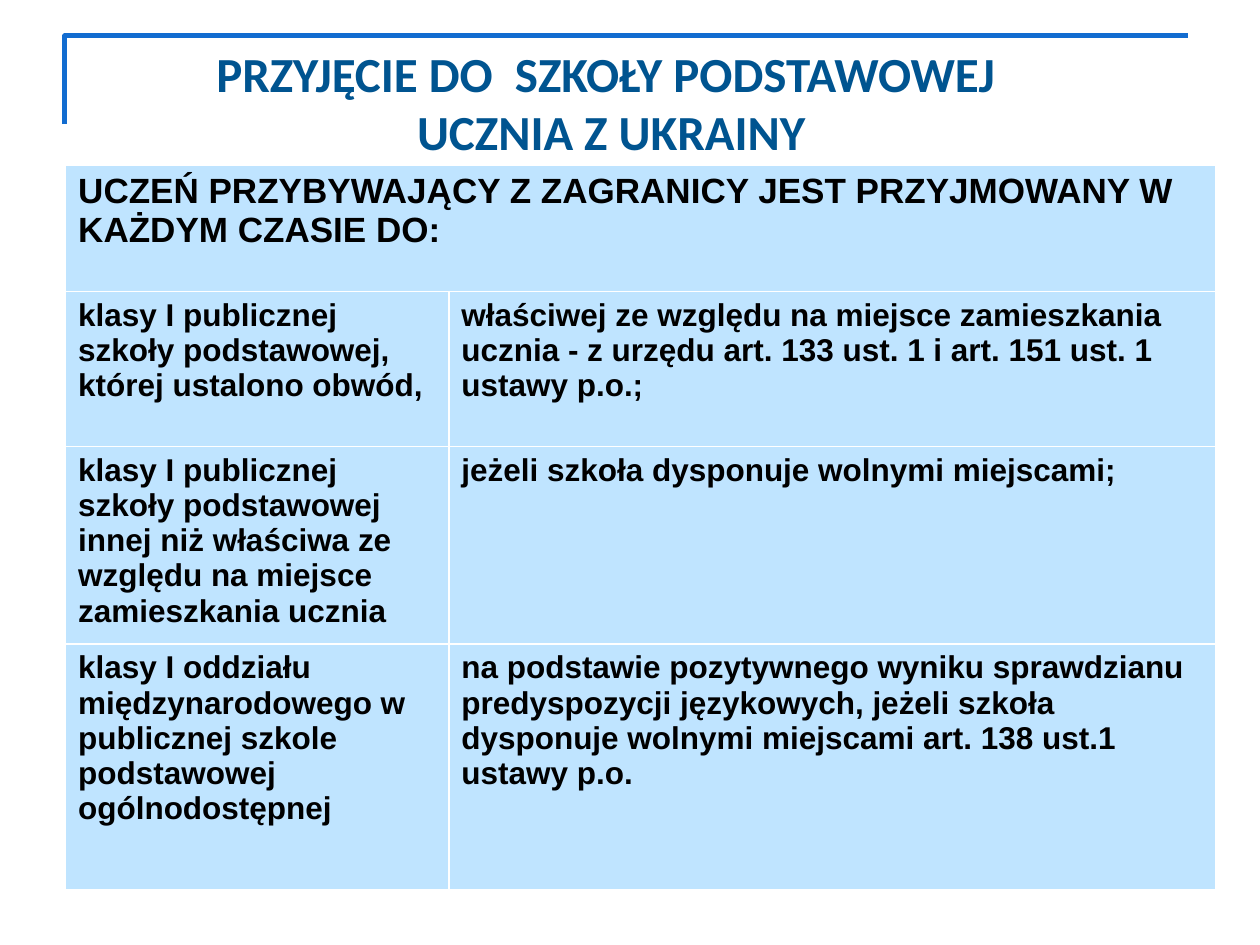
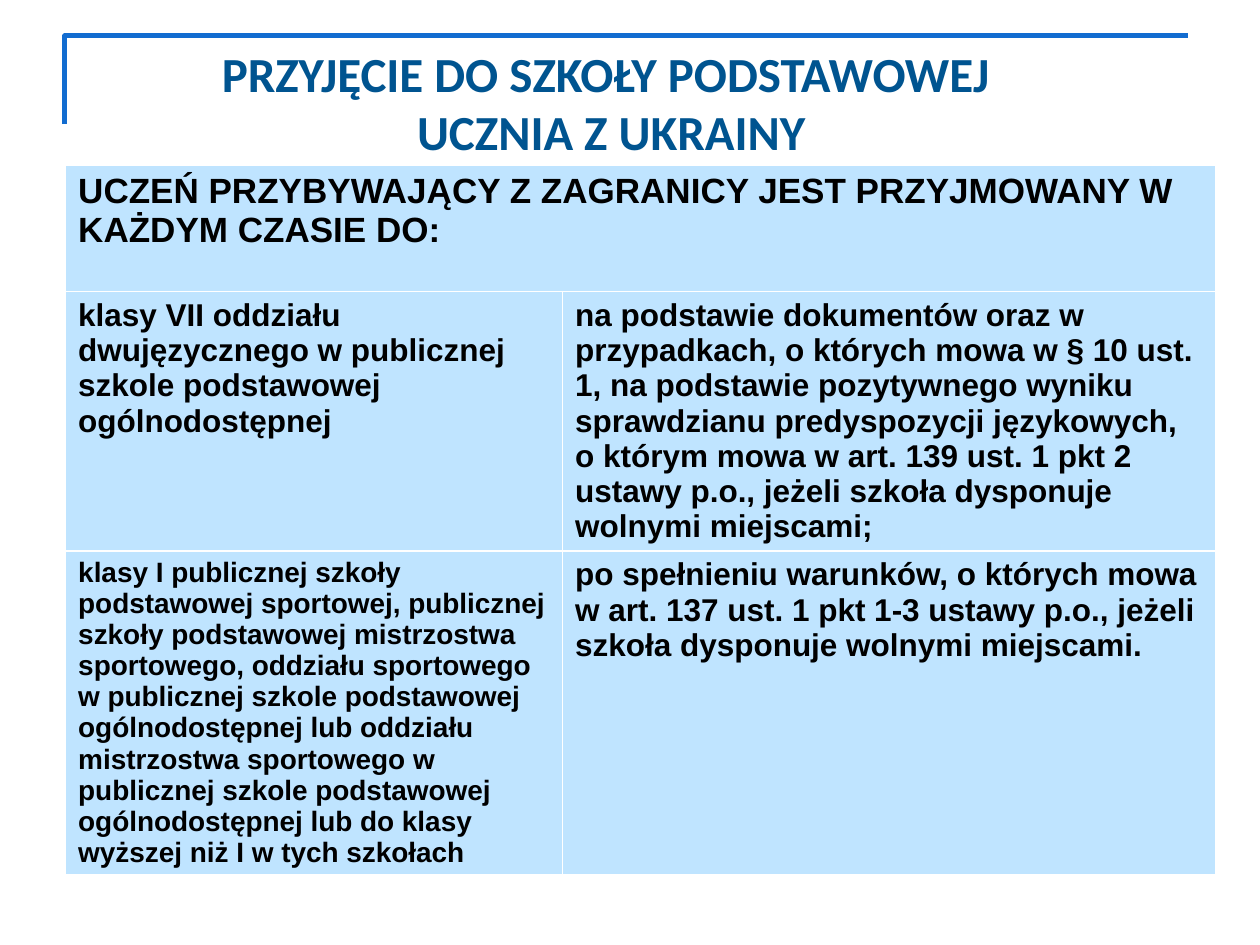
from dataclasses import dataclass

from lxml import etree
from pptx import Presentation
from pptx.dml.color import RGBColor
from pptx.enum.text import MSO_ANCHOR, MSO_AUTO_SIZE, PP_ALIGN
from pptx.oxml.ns import qn
from pptx.slide import Slide
from pptx.table import _Cell
from pptx.text.text import TextFrame
from pptx.util import Pt

# Shared look
TITLE_BLUE = RGBColor(0x00, 0x54, 0x90)
FRAME_BLUE = RGBColor(0x12, 0x6C, 0xD0)
CELL_BLUE = RGBColor(0xBF, 0xE4, 0xFF)
WHITE = RGBColor(0xFF, 0xFF, 0xFF)
BLACK = RGBColor(0x00, 0x00, 0x00)
CENTER, LEFT = PP_ALIGN.CENTER, PP_ALIGN.LEFT
TOP = MSO_ANCHOR.TOP
NO_AUTOFIT = MSO_AUTO_SIZE.NONE
TITLE_ONLY = 5

TITLE_BOX = (Pt(37.5), Pt(21), Pt(623.5), Pt(73.5))
TABLE_LEFT, TABLE_TOP, TABLE_WIDTH = 37.5, 94.5, 657
HEADER_HEIGHT = 72
HEADER = "UCZEŃ PRZYBYWAJĄCY Z ZAGRANICY JEST PRZYJMOWANY W KAŻDYM CZASIE DO:"


@dataclass(frozen=True)
class AdmissionRow:
    school: str
    condition: str
    height: float
    school_size: float = 18


@dataclass(frozen=True)
class AdmissionSlide:
    title: str
    school_width: float
    rows: tuple[AdmissionRow, ...]


SLIDES = (
    AdmissionSlide(
        "PRZYJĘCIE DO  SZKOŁY PODSTAWOWEJ \nUCZNIA Z UKRAINY",
        219,
        (
            AdmissionRow(
                "klasy I publicznej szkoły podstawowej, której ustalono obwód,",
                "właściwej ze względu na miejsce zamieszkania ucznia - z urzędu "
                "art. 133 ust. 1 i art. 151 ust. 1 ustawy p.o.;",
                88.5,
            ),
            AdmissionRow(
                "klasy I publicznej szkoły podstawowej innej niż właściwa ze "
                "względu na miejsce zamieszkania ucznia",
                "jeżeli szkoła dysponuje wolnymi miejscami;",
                113,
            ),
            AdmissionRow(
                "klasy I oddziału międzynarodowego w publicznej szkole "
                "podstawowej ogólnodostępnej",
                "na podstawie pozytywnego wyniku sprawdzianu predyspozycji "
                "językowych, jeżeli szkoła dysponuje wolnymi miejscami "
                "art. 138 ust.1 ustawy p.o.",
                140.5,
            ),
        ),
    ),
    AdmissionSlide(
        "PRZYJĘCIE DO SZKOŁY PODSTAWOWEJ \nUCZNIA Z UKRAINY",
        284,
        (
            AdmissionRow(
                "klasy VII oddziału dwujęzycznego w publicznej szkole "
                "podstawowej ogólnodostępnej",
                "na podstawie dokumentów oraz w przypadkach, o których mowa w "
                "§ 10 ust. 1, na podstawie pozytywnego wyniku sprawdzianu "
                "predyspozycji językowych, o którym mowa w art. 139 ust. 1 "
                "pkt 2 ustawy p.o., jeżeli szkoła dysponuje wolnymi miejscami;",
                148,
            ),
            AdmissionRow(
                "klasy I publicznej szkoły podstawowej sportowej, publicznej "
                "szkoły podstawowej mistrzostwa sportowego, oddziału sportowego "
                "w publicznej szkole podstawowej ogólnodostępnej lub oddziału "
                "mistrzostwa sportowego w publicznej szkole podstawowej "
                "ogólnodostępnej lub do klasy wyższej niż I w tych szkołach",
                "po spełnieniu warunków, o których mowa w art. 137 ust. 1 "
                "pkt 1-3 ustawy p.o., jeżeli szkoła dysponuje wolnymi miejscami.",
                184,
                school_size=16,
            ),
        ),
    ),
)


def write_text(
    text_frame: TextFrame,
    text: str,
    *,
    size: float,
    font: str = "Arial",
    color: RGBColor = BLACK,
    align: PP_ALIGN = LEFT,
) -> None:
    """Fill a text frame with one bold paragraph; newlines become line breaks."""
    paragraph = text_frame.paragraphs[0]
    paragraph.text = text
    paragraph.alignment = align
    for run in paragraph.runs:
        run.font.name = font
        run.font.size = Pt(size)
        run.font.bold = True
        run.font.color.rgb = color


def draw_corner_frame(slide: Slide) -> None:
    builder = slide.shapes.build_freeform(Pt(37), Pt(71), scale=1.0)
    builder.add_line_segments([(Pt(37), Pt(20.5)), (Pt(679), Pt(20.5))], close=False)
    shape = builder.convert_to_shape()
    shape.shadow.inherit = False
    shape.fill.background()
    shape.line.color.rgb = FRAME_BLUE
    shape.line.width = Pt(2.75)


def draw_title(slide: Slide, text: str) -> None:
    title = slide.shapes.title
    title.left, title.top, title.width, title.height = TITLE_BOX
    text_frame = title.text_frame
    text_frame.word_wrap = True
    text_frame.auto_size = NO_AUTOFIT
    text_frame.vertical_anchor = TOP
    write_text(text_frame, text, size=28, font="Calibri", color=TITLE_BLUE, align=CENTER)


def style_cell(cell: _Cell) -> None:
    """Give a cell white borders and the light blue fill."""
    properties = cell._tc.get_or_add_tcPr()
    for side in ("a:lnL", "a:lnR", "a:lnT", "a:lnB"):
        line = etree.SubElement(properties, qn(side), w=str(Pt(1)))
        fill = etree.SubElement(line, qn("a:solidFill"))
        etree.SubElement(fill, qn("a:srgbClr"), val=str(WHITE))
    cell.fill.solid()
    cell.fill.fore_color.rgb = CELL_BLUE


def draw_table(slide: Slide, content: AdmissionSlide) -> None:
    heights = [HEADER_HEIGHT, *(row.height for row in content.rows)]
    table = slide.shapes.add_table(
        len(heights), 2, Pt(TABLE_LEFT), Pt(TABLE_TOP), Pt(TABLE_WIDTH), Pt(sum(heights))
    ).table
    table.first_row = False
    table.horz_banding = False
    table.columns[0].width = Pt(content.school_width)
    table.columns[1].width = Pt(TABLE_WIDTH - content.school_width)
    for table_row, height in zip(table.rows, heights):
        table_row.height = Pt(height)
    for cell in table.iter_cells():
        style_cell(cell)

    # Header across both columns, then one row per kind of school
    table.cell(0, 0).merge(table.cell(0, 1))
    write_text(table.cell(0, 0).text_frame, HEADER, size=20)
    for index, row in enumerate(content.rows, start=1):
        write_text(table.cell(index, 0).text_frame, row.school, size=row.school_size)
        write_text(table.cell(index, 1).text_frame, row.condition, size=18)


def main() -> None:
    presentation = Presentation()
    presentation.slide_width = Pt(720)
    presentation.slide_height = Pt(540)
    for content in SLIDES:
        slide = presentation.slides.add_slide(presentation.slide_layouts[TITLE_ONLY])
        draw_corner_frame(slide)
        draw_title(slide, content.title)
        draw_table(slide, content)
    presentation.save("out.pptx")


if __name__ == "__main__":
    main()
